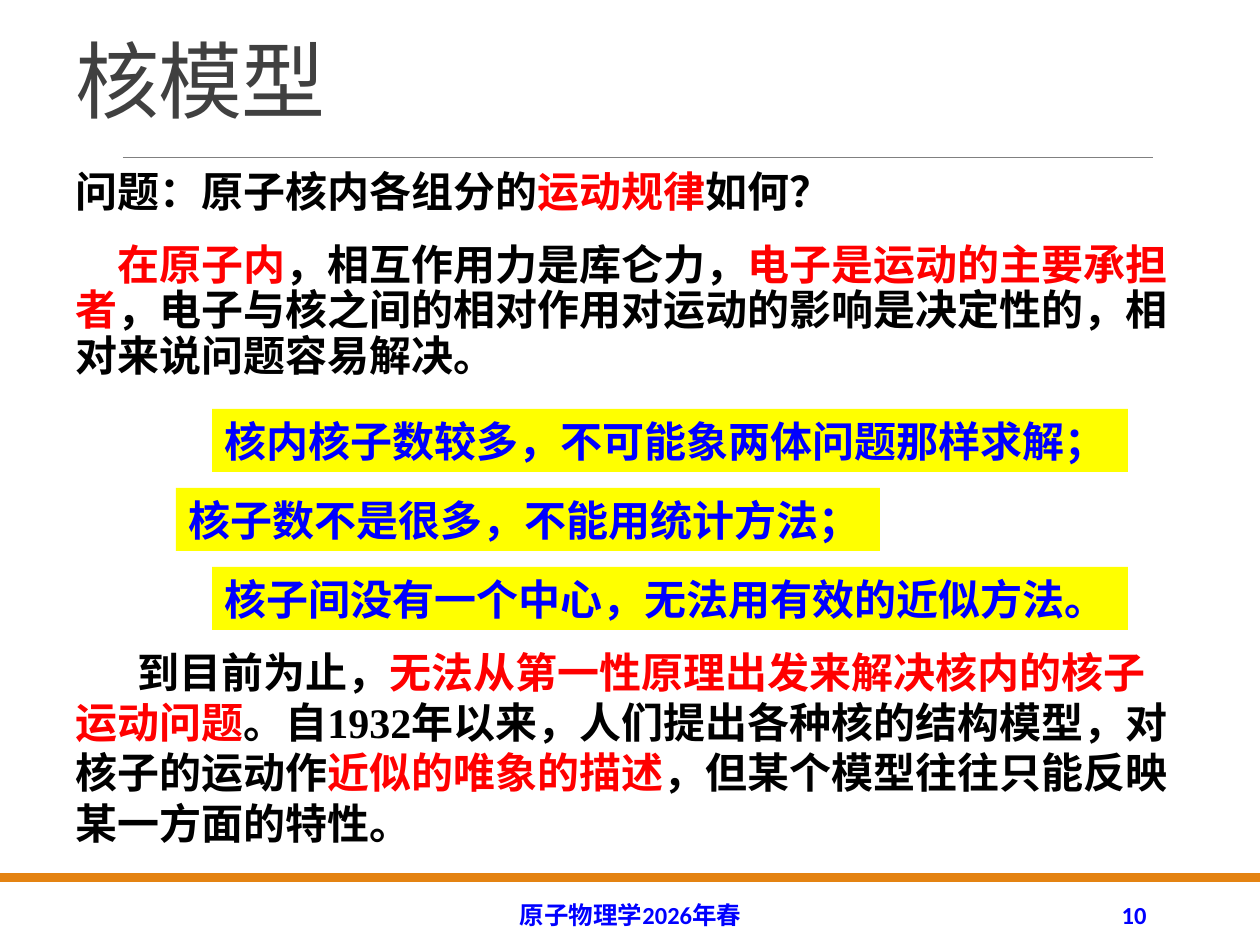
from pptx import Presentation
from pptx.dml.color import RGBColor
from pptx.enum.shapes import MSO_CONNECTOR, MSO_SHAPE
from pptx.enum.text import MSO_ANCHOR, PP_ALIGN
from pptx.oxml.ns import qn
from pptx.util import Emu, Pt
from lxml.etree import SubElement

BLACK = RGBColor(0, 0, 0)
RED = RGBColor(255, 0, 0)
BLUE = RGBColor(0, 0, 255)
YELLOW = RGBColor(255, 255, 0)
ORANGE = RGBColor(0xE4, 0x83, 0x12)
GRAY = RGBColor(0x80, 0x80, 0x80)
DARK = RGBColor(0x40, 0x40, 0x40)

BODY = {"name": "Times New Roman", "size": Pt(24), "bold": True}
HEAD = {"name": "Calibri", "size": Pt(48), "bold": False}
FOOT = {"name": "Calibri", "size": Pt(14), "bold": True}


def px(n):
    return Emu(round(n * 914400 / 126))


class Page:
    def __init__(self, deck):
        self.slide = deck.slides.add_slide(deck.slide_layouts[6])
        self.shapes = self.slide.shapes

    def label(self, shape, text, font, color, accent=RED, anchor=MSO_ANCHOR.TOP,
              align=PP_ALIGN.LEFT, lead=1.0, indent=0, track=0):
        """Runs between * marks take the accent colour."""
        frame = shape.text_frame
        frame.word_wrap = True
        frame.vertical_anchor = anchor
        para = frame.paragraphs[0]
        para.alignment = align
        para.line_spacing = lead
        if indent:
            para._p.get_or_add_pPr().set("indent", str(px(indent)))
        for i, part in enumerate(text.split("*")):
            if not part:
                continue
            run = para.add_run()
            run.text = part
            for key, value in font.items():
                setattr(run.font, key, value)
            run.font.color.rgb = accent if i % 2 else color
            if track:
                run._r.get_or_add_rPr().set("spc", str(track))

    def text(self, box, text, font=BODY, color=BLACK, **style):
        self.label(self.shapes.add_textbox(*map(px, box)), text, font, color, **style)

    def rect(self, box, fill):
        shape = self.shapes.add_shape(MSO_SHAPE.RECTANGLE, *map(px, box))
        shape.shadow.inherit = False
        shape.fill.solid()
        shape.fill.fore_color.rgb = fill
        shape.line.fill.background()
        return shape

    def rule(self, ends, color, width):
        line = self.shapes.add_connector(MSO_CONNECTOR.STRAIGHT, *map(px, ends))
        line.line.color.rgb = color
        line.line.width = Pt(width)
        SubElement(line._element.spPr, qn("a:effectLst"))


def main():
    deck = Presentation()
    deck.slide_width, deck.slide_height = px(1260), px(945)
    page = Page(deck)

    # Frame and title
    page.rect((0, 873, 1260, 9), ORANGE)
    page.rule((123, 157, 1153, 157), GRAY, 0.5)
    page.text((63, 8, 1144, 128), "核模型", HEAD, DARK,
              anchor=MSO_ANCHOR.BOTTOM, lead=0.85, track=-50)

    # Question and the case of the atom
    page.text((63, 165, 935, 58), "问题：原子核内各组分的*运动规律*如何？", lead=0.9)
    page.text((63, 238, 1134, 150),
              "*在原子内*，相互作用力是库仑力，*电子是运动的主要承担者*，"
              "电子与核之间的相对作用对运动的影响是决定性的，相对来说问题容易解决。",
              lead=0.9, indent=42)

    # Difficulties in the nucleus
    points = (
        (212, 916, "核内核子数较多，不可能象两体问题那样求解；"),
        (176, 704, "核子数不是很多，不能用统计方法；"),
        (212, 916, "核子间没有一个中心，无法用有效的近似方法。"),
    )
    for i, (left, width, text) in enumerate(points):
        bar = page.rect((left, 409 + 79 * i, width, 63), YELLOW)
        page.label(bar, text, BODY, BLUE)

    # Conclusion
    page.text((63, 640, 1134, 217),
              "到目前为止，*无法从第一性原理出发来解决核内的核子运动问题*。"
              "自1932年以来，人们提出各种核的结构模型，对核子的运动作"
              "*近似的唯象的描述*，但某个模型往往只能反映某一方面的特性。",
              indent=62)

    # Footer
    page.text((381, 890, 499, 50), "原子物理学2026年春", FOOT, BLUE,
              anchor=MSO_ANCHOR.MIDDLE, align=PP_ALIGN.CENTER)
    page.text((1023, 890, 136, 50), "10", FOOT, BLUE,
              anchor=MSO_ANCHOR.MIDDLE, align=PP_ALIGN.RIGHT)

    deck.save("out.pptx")


if __name__ == "__main__":
    main()
